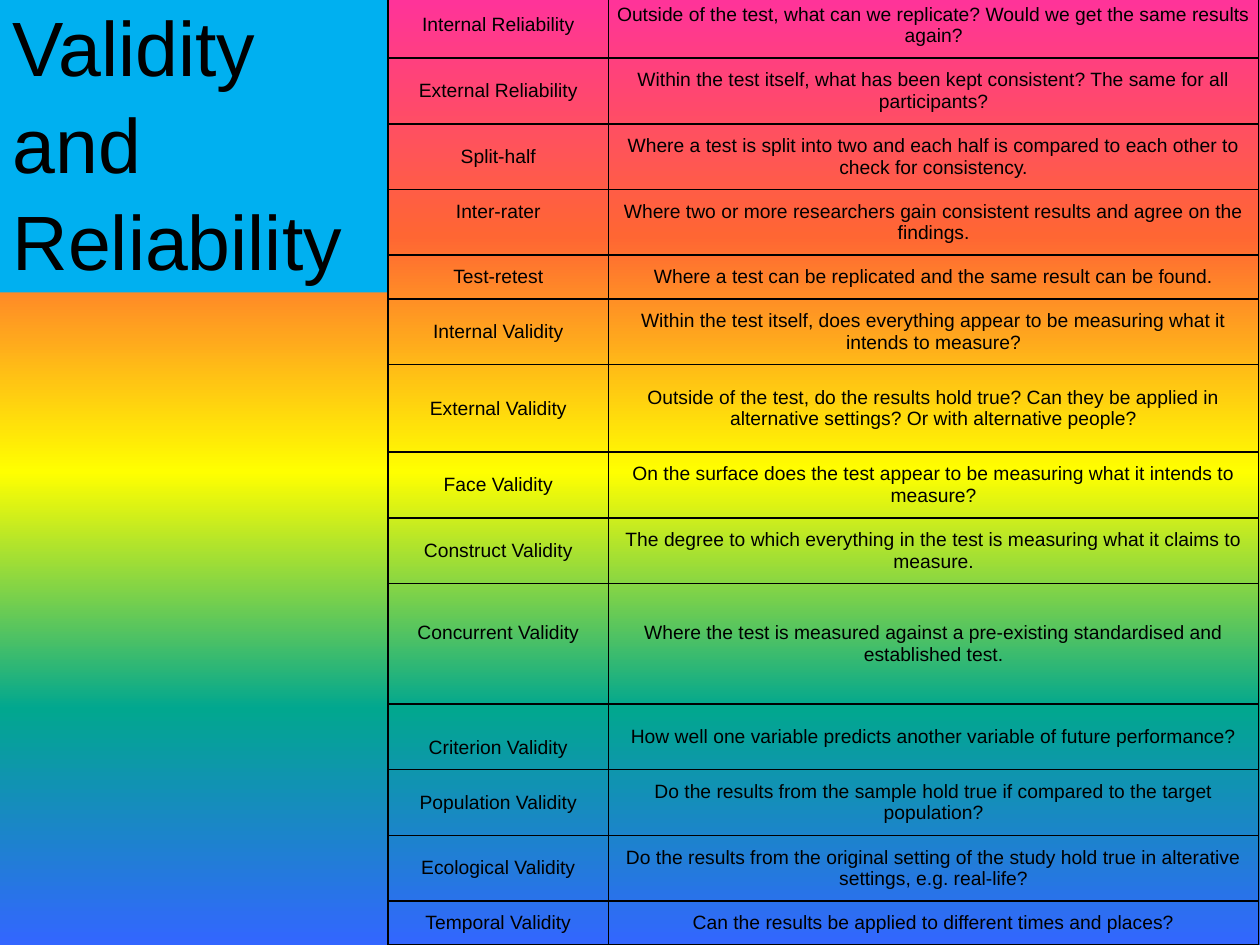
"""Build a slide that defines the kinds of reliability and validity."""
from lxml import etree
from pptx import Presentation
from pptx import util as u
from pptx.dml.color import RGBColor
from pptx.enum import text
from pptx.oxml import ns

COLOURS = {"ink": "000000", "title": "00B0F0"}
RAINBOW = ["FF3399", "FF6633", "FFFF00", "01A78F", "3366FF"]
FONT = "Arial"
TERMS = [
    ("Internal Reliability", "Outside of the test, what can we replicate? Would we get the same results again?", 3),
    ("External Reliability", "Within the test itself, what has been kept consistent? The same for all participants?", 3),
    ("Split-half", "Where a test is split into two and each half is compared to each other to check for consistency.", 3),
    ("Inter-rater", "Where two or more researchers gain consistent results and agree on the findings.", 3),
    ("Test-retest", "Where a test can be replicated and the same result can be found.", 2),
    ("Internal Validity", "Within the test itself, does everything appear to be measuring what it intends to measure?", 3),
    ("External Validity", "Outside of the test, do the results hold true? Can they be applied in alternative settings? "
     "Or with alternative people?", 4),
    ("Face Validity", "On the surface does the test appear to be measuring what it intends to measure?", 3),
    ("Construct Validity", "The degree to which everything in the test is measuring what it claims to measure.", 3),
    ("Concurrent Validity", "Where the test is measured against a pre-existing standardised and established test.", 5.5),
    ("Criterion Validity", "How well one variable predicts another variable of future performance?", 3),
    ("Population Validity", "Do the results from the sample hold true if compared to the target population?", 3),
    ("Ecological Validity", "Do the results from the original setting of the study hold true in alterative settings, "
     "e.g. real-life?", 3),
    ("Temporal Validity", "Can the results be applied to different times and places?", 2),
]
RAISED = {"Inter-rater", "Concurrent Validity"}
LOWERED = {"Criterion Validity"}


def style(para, size, align):
    para.alignment = align
    para.font.name = FONT
    para.font.size = u.Pt(size)
    para.font.color.rgb = RGBColor.from_string(COLOURS["ink"])


def add_colour(parent, colour):
    return etree.SubElement(parent, ns.qn("a:srgbClr"), val=colour)


deck = Presentation()
deck.slide_width, deck.slide_height = u.Inches(10), u.Inches(7.5)
page = deck.slides.add_slide(deck.slide_layouts[5])

backdrop = page.background.fill
backdrop.gradient()
backdrop.gradient_angle = 270
stops = next(page.element.iter(ns.qn("a:gsLst")))
for stop in list(stops):
    stops.remove(stop)
for index, colour in enumerate(RAINBOW):
    stop = etree.SubElement(stops, ns.qn("a:gs"), pos=str(index * 25000))
    add_colour(stop, colour)

split = u.Inches(3.08)
title = page.shapes.title
title.left, title.top, title.width, title.height = 0, 0, split, u.Inches(2.32)
title.fill.solid()
title.fill.fore_color.rgb = RGBColor.from_string(COLOURS["title"])
frame = title.text_frame
frame.text = "Validity and Reliability"
frame.word_wrap = True
frame.auto_size = text.MSO_AUTO_SIZE.NONE
frame.vertical_anchor = text.MSO_ANCHOR.BOTTOM
para = frame.paragraphs[0]
para.line_spacing = 1.05
style(para, 44, text.PP_ALIGN.LEFT)

top = u.Inches(-0.06)
table_width, table_height = u.Inches(6.91), deck.slide_height - top
line = table_height / sum(lines for _, _, lines in TERMS)
table = page.shapes.add_table(len(TERMS), 2, split, top, table_width, table_height).table
table.first_row = table.horz_banding = False
table.columns[0].width = u.Inches(1.75)
table.columns[1].width = table_width - u.Inches(1.75)

for row, (term, meaning, lines) in enumerate(TERMS):
    table.rows[row].height = int(line * lines)
    for column, words in enumerate((term, meaning)):
        cell = table.cell(row, column)
        cell.text = words
        cell.vertical_anchor = text.MSO_ANCHOR.MIDDLE
        cell.margin_left = cell.margin_right = u.Inches(0.03)
        cell.margin_top = int(line) if words in LOWERED else 0
        cell.margin_bottom = int(line) if words in RAISED else 0
        style(cell.text_frame.paragraphs[0], 11, text.PP_ALIGN.CENTER)
        properties = cell._tc.get_or_add_tcPr()
        for side in "LRTB":
            border = etree.SubElement(properties, ns.qn(f"a:ln{side}"), w=str(u.Pt(1)))
            add_colour(etree.SubElement(border, ns.qn("a:solidFill")), COLOURS["ink"])
        cell.fill.background()

deck.save("out.pptx")
